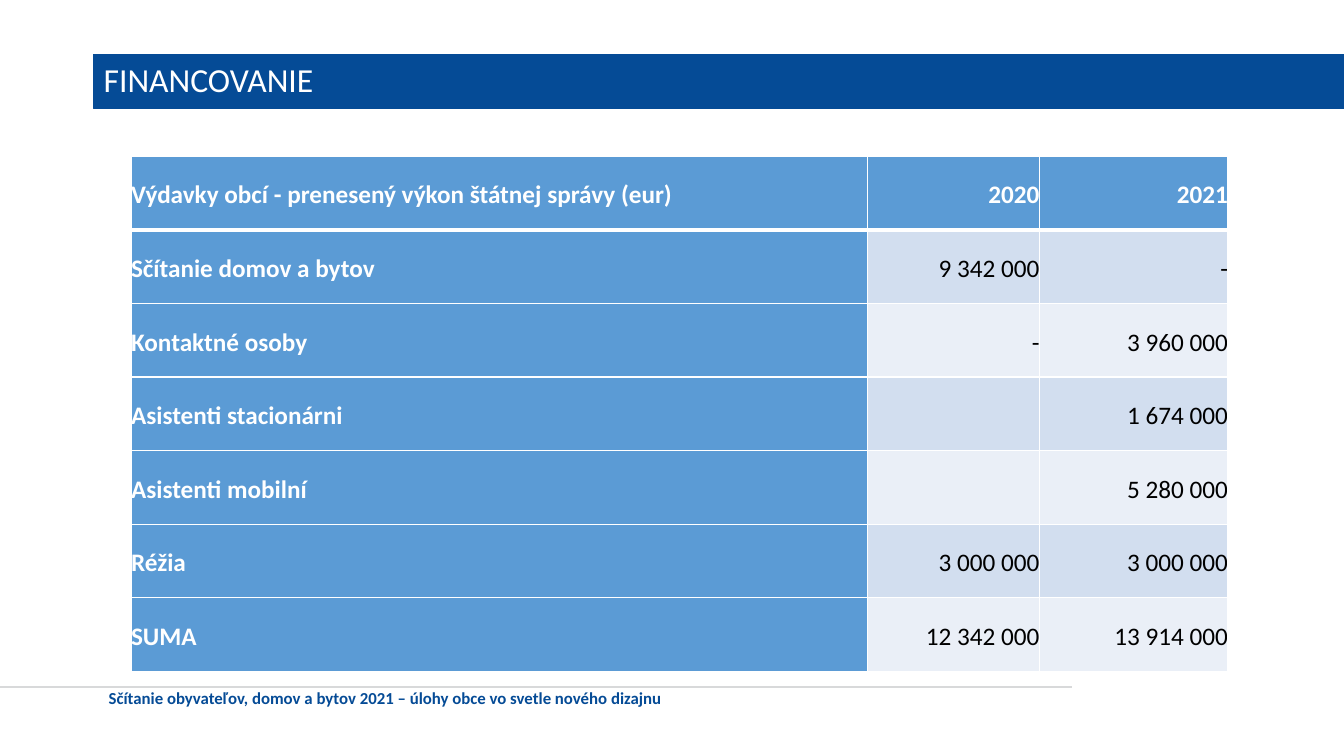
from dataclasses import dataclass

from lxml.etree import SubElement
from pptx import Presentation
from pptx.dml.color import RGBColor
from pptx.enum.shapes import MSO_CONNECTOR as Connector, MSO_SHAPE as Shape
from pptx.enum.text import MSO_ANCHOR as Anchor, PP_ALIGN as Align
from pptx.oxml.ns import qn
from pptx.util import Inches, Pt

COLORS = {
    "navy": "054B96",
    "blue": "5B9BD5",
    "band_dark": "D2DEEF",
    "band_light": "EAEFF7",
    "rule": "D8D9DA",
    "white": "FFFFFF",
    "black": "000000",
}
COLUMN_WIDTHS = (7.3, 1.71, 1.87)
ROW_HEIGHT = 0.73


@dataclass(frozen=True)
class Expense:
    label: str
    year_2020: str
    year_2021: str


@dataclass(frozen=True)
class TextStyle:
    size: float
    color: str
    bold: bool = False
    align: Align = Align.LEFT
    spacing: float = 0.9


EXPENSES = (
    Expense("Výdavky obcí - prenesený výkon štátnej správy (eur)", "2020", "2021"),
    Expense("Sčítanie domov a bytov", "9 342 000", "\N{NO-BREAK SPACE}-"),
    Expense("Kontaktné osoby", "-", "3 960 000"),
    Expense("Asistenti stacionárni", "", "1 674 000"),
    Expense("Asistenti mobilní", "", "5 280 000"),
    Expense("Réžia", "3 000 000", "3 000 000"),
    Expense("SUMA", "12 342 000", "13 914 000"),
)


def rgb(name: str) -> RGBColor:
    return RGBColor.from_string(COLORS[name])


def write_text(frame, text: str, style: TextStyle) -> None:
    frame.text = text
    para = frame.paragraphs[0]
    para.alignment = style.align
    para.line_spacing = style.spacing
    for target in (para, *para.runs):
        target.font.name = "Calibri"
        target.font.size = Pt(style.size)
        target.font.bold = style.bold
        target.font.color.rgb = rgb(style.color)


def add_borders(cell, bottom_width: float) -> None:
    properties = cell._tc.get_or_add_tcPr()
    widths = {"a:lnL": 1, "a:lnR": 1, "a:lnT": 1, "a:lnB": bottom_width}
    for position, (tag, width) in enumerate(widths.items()):
        line = SubElement(properties, qn(tag), w=str(Pt(width)))
        fill = SubElement(line, qn("a:solidFill"))
        SubElement(fill, qn("a:srgbClr"), val=COLORS["white"])
        properties.insert(position, line)


def format_cell(cell, text: str, row: int, column: int) -> None:
    heading = row == 0 or column == 0
    band = "band_dark" if row % 2 else "band_light"
    cell.margin_left = cell.margin_right = cell.margin_top = cell.margin_bottom = 0
    cell.vertical_anchor = Anchor.MIDDLE
    cell.fill.solid()
    cell.fill.fore_color.rgb = rgb("blue" if heading else band)
    write_text(cell.text_frame, text, TextStyle(
        18,
        "white" if heading else "black",
        bold=heading,
        align=Align.RIGHT if column else Align.LEFT,
        spacing=1.15,
    ))
    add_borders(cell, 1 if row else 3)


def add_expense_table(page) -> None:
    table = page.shapes.add_table(
        len(EXPENSES), len(COLUMN_WIDTHS), Inches(1.3), Inches(1.55),
        Inches(sum(COLUMN_WIDTHS)), Inches(ROW_HEIGHT * len(EXPENSES)),
    ).table
    for column, width in zip(table.columns, COLUMN_WIDTHS):
        column.width = Inches(width)
    for row, expense in enumerate(EXPENSES):
        table.rows[row].height = Inches(ROW_HEIGHT)
        texts = (expense.label, expense.year_2020, expense.year_2021)
        for column, text in enumerate(texts):
            format_cell(table.cell(row, column), text, row, column)


def add_title(page) -> None:
    bar = page.shapes.add_shape(
        Shape.RECTANGLE, Inches(0.93), Inches(0.54), Inches(12.42), Inches(0.54))
    bar.shadow.inherit = False
    bar.fill.solid()
    bar.fill.fore_color.rgb = rgb("navy")
    bar.line.color.rgb = rgb("navy")
    bar.line.width = Pt(0.75)
    bar.text_frame.vertical_anchor = Anchor.MIDDLE
    write_text(bar.text_frame, "FINANCOVANIE", TextStyle(24, "white"))


def add_footer(page) -> None:
    rule = page.shapes.add_connector(
        Connector.STRAIGHT, 0, Inches(6.82), Inches(10.63), Inches(6.82))
    rule.line.color.rgb = rgb("rule")
    rule.line.width = Pt(1.5)
    SubElement(rule._element.spPr, qn("a:effectLst"))
    box = page.shapes.add_textbox(
        Inches(0.98), Inches(6.85), Inches(9.6), Inches(0.4))
    frame = box.text_frame
    frame.word_wrap = True
    frame.margin_top = 0
    frame.vertical_anchor = Anchor.TOP
    write_text(
        frame,
        "Sčítanie obyvateľov, domov a bytov 2021 – úlohy obce vo svetle nového dizajnu",
        TextStyle(12, "navy", bold=True),
    )


def main() -> None:
    deck = Presentation()
    deck.slide_width = Inches(13.33)
    deck.slide_height = Inches(7.5)
    page = deck.slides.add_slide(deck.slide_layouts[6])
    add_footer(page)
    add_expense_table(page)
    add_title(page)
    deck.save("out.pptx")


if __name__ == "__main__":
    main()
